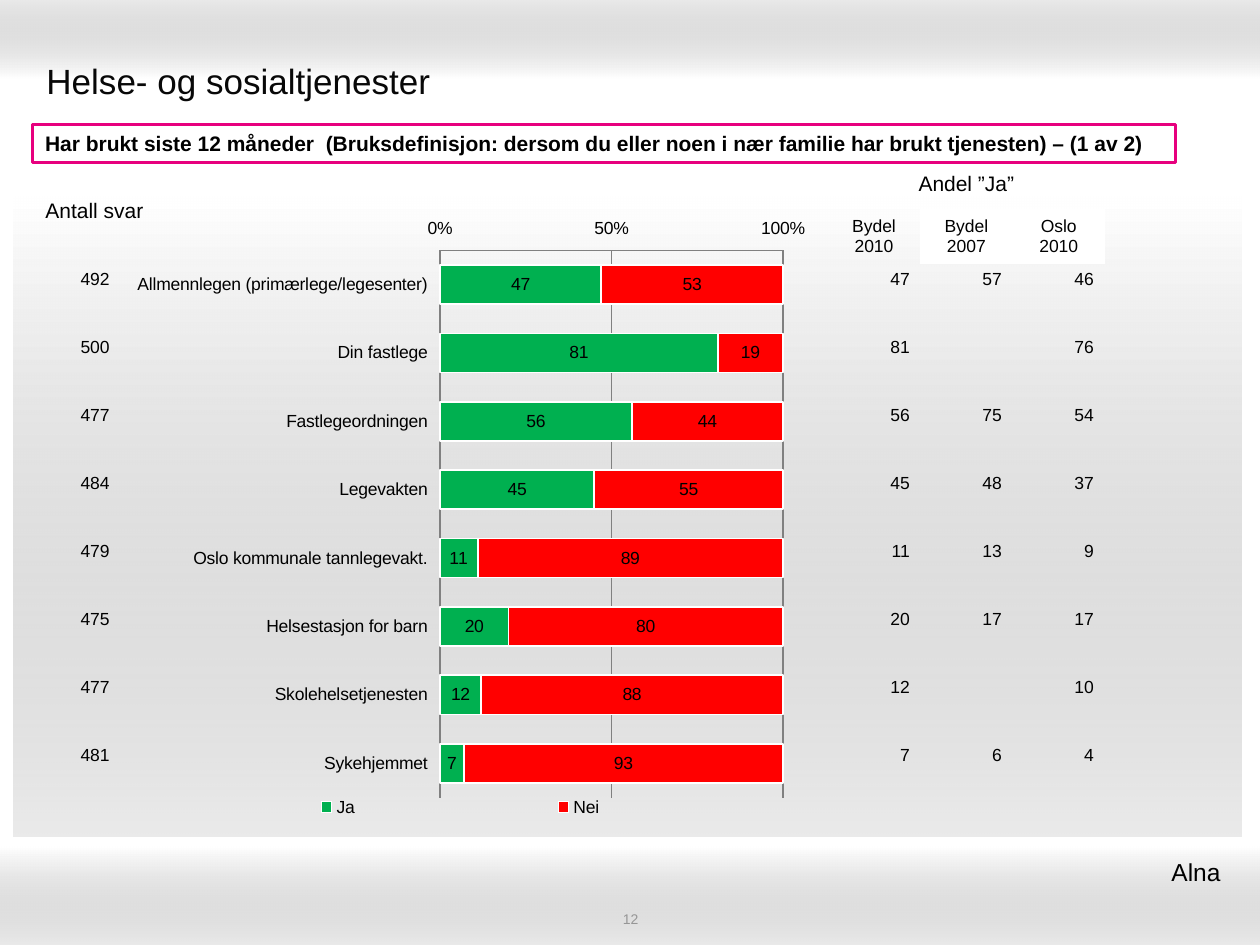
from lxml import etree
from pptx import Presentation
from pptx.chart.data import CategoryChartData
from pptx.dml.color import RGBColor
from pptx.enum.chart import (XL_CHART_TYPE, XL_LABEL_POSITION, XL_LEGEND_POSITION,
                             XL_TICK_LABEL_POSITION, XL_TICK_MARK)
from pptx.enum.shapes import MSO_SHAPE
from pptx.enum.text import MSO_ANCHOR, PP_ALIGN
from pptx.oxml import parse_xml
from pptx.util import Inches, Pt

FONT = "Arial"
BLACK, WHITE = "000000", "FFFFFF"
PLAIN_TABLE = "{2D5ABB26-0587-4C30-8999-92F81FD0307C}"
DRAWING_NS = "http://schemas.openxmlformats.org/drawingml/2006/main"
CHART_NS = "http://schemas.openxmlformats.org/drawingml/2006/chart"

# service, number of answers, yes, no, district 2007, Oslo 2010
SERVICES = [
    ("Allmennlegen (primærlege/legesenter)", 492, 47, 53, 57, 46),
    ("Din fastlege", 500, 81, 19, "", 76),
    ("Fastlegeordningen", 477, 56, 44, 75, 54),
    ("Legevakten", 484, 45, 55, 48, 37),
    ("Oslo kommunale tannlegevakt.", 479, 11, 89, 13, 9),
    ("Helsestasjon for barn", 475, 20, 80, 17, 17),
    ("Skolehelsetjenesten", 477, 12, 88, "", 10),
    ("Sykehjemmet", 481, 7, 93, 6, 4),
]


def color(value):
    return RGBColor.from_string(value)


def inches(box):
    return [Inches(length) for length in box]


def write(frame, text, size=10, fill=BLACK, bold=False, align=PP_ALIGN.LEFT):
    for index, line in enumerate(text.split("\n")):
        para = frame.paragraphs[0] if index == 0 else frame.add_paragraph()
        para.alignment = align
        span = para.add_run()
        span.text = line
        span.font.name, span.font.size, span.font.bold = FONT, Pt(size), bold
        span.font.color.rgb = color(fill)


def add_text(page, box, text, anchor=MSO_ANCHOR.TOP, inset=None, **style):
    frame = page.shapes.add_textbox(*inches(box)).text_frame
    frame.word_wrap = True
    frame.vertical_anchor = anchor
    if inset is not None:
        frame.margin_left = frame.margin_right = Inches(inset)
        frame.margin_top = frame.margin_bottom = Inches(inset)
    write(frame, text, **style)


def add_band(page, box, angle):
    """Rectangle fading from white to translucent grey."""
    band = page.shapes.add_shape(MSO_SHAPE.RECTANGLE, *inches(box))
    band.shadow.inherit = False
    band.line.fill.background()
    gradient = parse_xml(
        f'<a:gradFill xmlns:a="{DRAWING_NS}" rotWithShape="1"><a:gsLst>'
        '<a:gs pos="0"><a:srgbClr val="FFFFFF"/></a:gs>'
        '<a:gs pos="100000"><a:srgbClr val="999999"><a:alpha val="20000"/></a:srgbClr></a:gs>'
        f'</a:gsLst><a:lin ang="{angle * 60000}" scaled="0"/></a:gradFill>')
    band.element.spPr.find(f"{{{DRAWING_NS}}}prstGeom").addnext(gradient)


def add_question(page, box, text):
    frame_box = page.shapes.add_shape(MSO_SHAPE.RECTANGLE, *inches(box))
    frame_box.shadow.inherit = False
    frame_box.fill.solid()
    frame_box.fill.fore_color.rgb = color(WHITE)
    frame_box.line.color.rgb = color("E7007E")
    frame_box.line.width = Pt(2)
    frame_box.text_frame.word_wrap = True
    frame_box.text_frame.vertical_anchor = MSO_ANCHOR.TOP
    write(frame_box.text_frame, text, size=12, bold=True)


def add_table(page, box, rows, heights=(), align=PP_ALIGN.RIGHT, size=10):
    """Unstyled table with equal columns, and equal rows unless heights are given."""
    table = page.shapes.add_table(len(rows), len(rows[0]), *inches(box)).table
    table.first_row = table.horz_banding = False
    table._tbl.tblPr.find(f"{{{DRAWING_NS}}}tableStyleId").text = PLAIN_TABLE
    for row, height in zip(table.rows, heights):
        row.height = Inches(height)
    for row_index, row in enumerate(rows):
        for column_index, value in enumerate(row):
            cell = table.cell(row_index, column_index)
            cell.fill.background()
            cell.vertical_anchor = MSO_ANCHOR.MIDDLE
            if value != "":
                write(cell.text_frame, str(value), size=size, align=align)
    return table


def add_share_heading(page, box):
    rows = [["", "", ""], ["Bydel\n2010", "Bydel\n2007", "Oslo\n2010"]]
    table = add_table(page, box, rows, heights=[0.39, 0.41], align=PP_ALIGN.CENTER)
    heading = table.cell(0, 0)
    heading.merge(table.cell(0, 2))
    write(heading.text_frame, "Andel ”Ja”", size=12, align=PP_ALIGN.CENTER)
    for column in (1, 2):
        fill = table.cell(1, column).fill
        fill.solid()
        fill.fore_color.rgb = color(WHITE)


def set_layout(part, index, x, y, width, height, inner=False):
    """Place a chart part by fractions of the chart area; index is the layout's child position."""
    for old in part.findall(f"{{{CHART_NS}}}layout"):
        part.remove(old)
    layout = etree.Element(f"{{{CHART_NS}}}layout")
    manual = etree.SubElement(layout, f"{{{CHART_NS}}}manualLayout")
    values = [("layoutTarget", "inner")] if inner else []
    values += [("xMode", "edge"), ("yMode", "edge"),
               ("x", x), ("y", y), ("w", width), ("h", height)]
    for name, value in values:
        etree.SubElement(manual, f"{{{CHART_NS}}}{name}").set("val", str(value))
    part.insert(index, layout)


def add_usage_chart(page, box):
    data = CategoryChartData()
    data.categories = [service[0] for service in SERVICES]
    data.add_series("Ja", [service[2] for service in SERVICES])
    data.add_series("Nei", [service[3] for service in SERVICES])
    chart = page.shapes.add_chart(XL_CHART_TYPE.BAR_STACKED, *inches(box), data).chart
    chart.has_title = False
    chart.font.name, chart.font.size = FONT, Pt(10)
    chart.font.color.rgb = color(BLACK)

    # Bars and labels
    plot = chart.plots[0]
    plot.gap_width, plot.overlap, plot.vary_by_categories = 75, 100, False
    for series, fill in zip(plot.series, ("00B050", "FF0000")):
        series.format.fill.solid()
        series.format.fill.fore_color.rgb = color(fill)
        series.format.line.color.rgb = color(WHITE)
        series.format.line.width = Pt(1)
        labels = series.data_labels
        labels.show_value = True
        labels.number_format, labels.number_format_is_linked = "0", False
        labels.position = XL_LABEL_POSITION.CENTER

    # Axes
    services, share = chart.category_axis, chart.value_axis
    services.reverse_order = True
    services.major_tick_mark = XL_TICK_MARK.NONE
    share.major_tick_mark = XL_TICK_MARK.INSIDE
    share.minimum_scale, share.maximum_scale, share.major_unit = 0, 100, 50
    share.tick_labels.number_format = r"General\%"
    share.tick_labels.number_format_is_linked = False
    share.has_major_gridlines = True
    for axis in (services, share):
        axis.tick_label_position = XL_TICK_LABEL_POSITION.LOW
    for line in (services.format.line, share.format.line, share.major_gridlines.format.line):
        line.color.rgb = color("808080")
        line.width = Pt(0.75)

    # Legend and plot area
    chart.has_legend = True
    chart.legend.position = XL_LEGEND_POSITION.BOTTOM
    chart.legend.include_in_layout = False
    plot_area = chart._chartSpace.find(f".//{{{CHART_NS}}}plotArea")
    set_layout(plot_area, 0, 0.456, 0.07, 0.494, 0.85, inner=True)
    set_layout(chart.legend._element, 1, 0, 0.91, 0.97, 0.05)


def main():
    deck = Presentation()
    deck.slide_width, deck.slide_height = Inches(10), Inches(7.5)
    page = deck.slides.add_slide(deck.slide_layouts[6])

    # Background bands
    add_band(page, (0, 0, 10, 0.62), 270)
    add_band(page, (0, 6.72, 10, 0.78), 90)
    add_band(page, (0.11, 1.56, 9.74, 5.08), 90)

    # Title, page number and question
    add_text(page, (0.27, 0.36, 9.45, 0.55), "Helse- og sosialtjenester",
             anchor=MSO_ANCHOR.MIDDLE, size=20, fill="080808")
    add_text(page, (3.42, 7.22, 3.17, 0.14), "12", anchor=MSO_ANCHOR.MIDDLE, inset=0,
             size=8, fill="969696", align=PP_ALIGN.CENTER)
    add_question(page, (0.26, 0.99, 9.07, 0.3),
                 "Har brukt siste 12 måneder  (Bruksdefinisjon: dersom du eller noen "
                 "i nær familie har brukt tjenesten) – (1 av 2)")

    # Chart with the tables on either side
    add_usage_chart(page, (0.98, 1.63, 5.51, 5.11))
    add_table(page, (6.59, 1.95, 2.19, 4.32),
              [(yes, earlier, city) for _, _, yes, _, earlier, city in SERVICES])
    add_share_heading(page, (6.57, 1.27, 2.2, 0.8))
    add_table(page, (0.04, 1.38, 1.42, 0.59), [["Antall svar"]],
              align=PP_ALIGN.CENTER, size=12)
    add_table(page, (0.26, 1.95, 0.71, 4.32), [[service[1]] for service in SERVICES])

    # District
    add_text(page, (6.1, 6.75, 3.74, 0.34), "Alna ", size=14, align=PP_ALIGN.RIGHT)
    deck.save("out.pptx")


if __name__ == "__main__":
    main()
